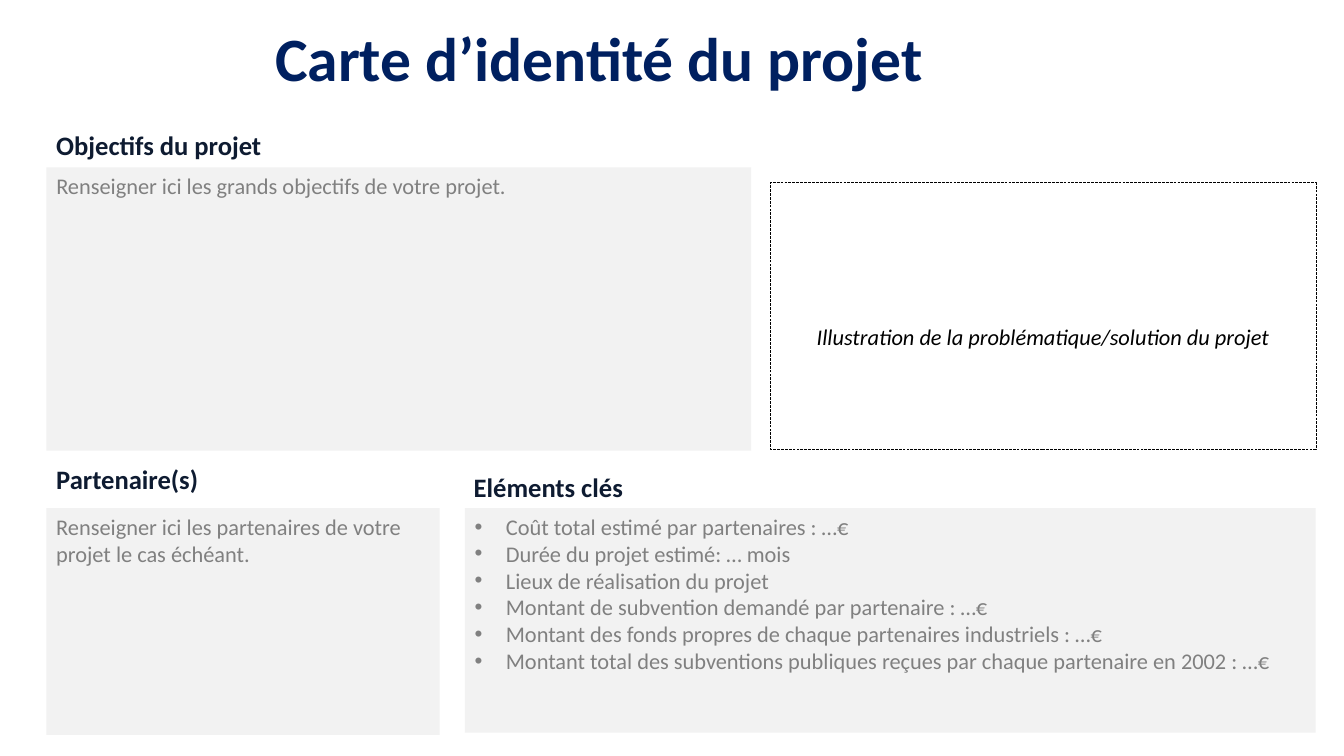
import pptx
import pptx.util
import pptx.dml.color
import pptx.enum.dml
import pptx.enum.shapes
import pptx.enum.text
import lxml.etree

Inches = pptx.util.Inches
Align = pptx.enum.text.PP_ALIGN
Anchor = pptx.enum.text.MSO_ANCHOR


def color(value):
    return pptx.dml.color.RGBColor.from_string(value)


def write(box, lines, size, ink, align=Align.LEFT, bulleted=False, **style):
    frame = box.text_frame
    frame.word_wrap = True
    frame.vertical_anchor = Anchor.TOP
    for index, line in enumerate(lines):
        para = frame.paragraphs[0] if index == 0 else frame.add_paragraph()
        para.alignment = align
        if bulleted:
            properties = para._p.get_or_add_pPr()
            properties.set("marL", str(Inches(0.31)))
            properties.set("indent", str(-Inches(0.31)))
            for tag, name, value in (("buFont", "typeface", "Arial"), ("buChar", "char", "•")):
                bullet = lxml.etree.SubElement(properties, pptx.oxml.ns.qn("a:" + tag))
                bullet.set(name, value)
        span = para.add_run()
        span.text = line
        span.font.color.rgb = color(ink)
        settings = {"name": "Calibri", "size": pptx.util.Pt(size), **style}
        for name, value in settings.items():
            setattr(span.font, name, value)


deck = pptx.Presentation()
deck.slide_width = Inches(13.33)
deck.slide_height = Inches(7.5)
page = deck.slides.add_slide(deck.slide_layouts[6])

headings = [
    ("Carte d’identité du projet", (2.63, 0, 9.53, 1.23), 44, "002060"),
    ("Objectifs du projet", (0.46, 1.23, 5.86, 0.42), 19, "0E1B31"),
    ("Partenaire(s)", (0.46, 4.54, 2.8, 0.42), 19, "0E1B31"),
    ("Eléments clés", (4.6, 4.62, 2.01, 0.43), 19, "0E1B31"),
]
for text, place, size, ink in headings:
    box = page.shapes.add_textbox(*map(Inches, place))
    write(box, [text], size, ink, bold=True)
    if size == 44:
        box.text_frame.vertical_anchor = Anchor.MIDDLE
        box.text_frame.paragraphs[0].line_spacing = 0.9

goals = ["Renseigner ici les grands objectifs de votre projet."]
partners = ["Renseigner ici les partenaires de votre projet le cas échéant."]
key_facts = [
    "Coût total estimé par partenaires : …€",
    "Durée du projet estimé: … mois",
    "Lieux de réalisation du projet",
    "Montant de subvention demandé par partenaire : …€",
    "Montant des fonds propres de chaque partenaires industriels : …€",
    "Montant total des subventions publiques reçues par chaque partenaire en 2002 : …€",
]
illustration = ["Illustration de la problématique/solution du projet"]

panels = [
    (goals, (0.46, 1.66, 6.99, 2.81), "808080", {"align": Align.JUSTIFY}),
    (partners, (0.46, 5.04, 3.9, 2.25), "808080", {}),
    (key_facts, (4.61, 5.04, 8.44, 2.23), "808080", {"align": Align.JUSTIFY, "bulleted": True}),
    (illustration, (7.64, 1.81, 5.41, 2.65), "000000", {"align": Align.CENTER, "italic": True}),
]
for lines, place, ink, layout in panels:
    panel = page.shapes.add_shape(pptx.enum.shapes.MSO_SHAPE.RECTANGLE, *map(Inches, place))
    panel.shadow.inherit = False
    write(panel, lines, 16, ink, **layout)
    if lines is illustration:
        panel.fill.background()
        panel.line.color.rgb = color("000000")
        panel.line.width = pptx.util.Pt(0.25)
        panel.line.dash_style = pptx.enum.dml.MSO_LINE.LONG_DASH
        panel.text_frame.margin_top = Inches(1.4)
    else:
        panel.fill.solid()
        panel.fill.fore_color.rgb = color("F2F2F2")
        panel.line.fill.background()

deck.save("out.pptx")
